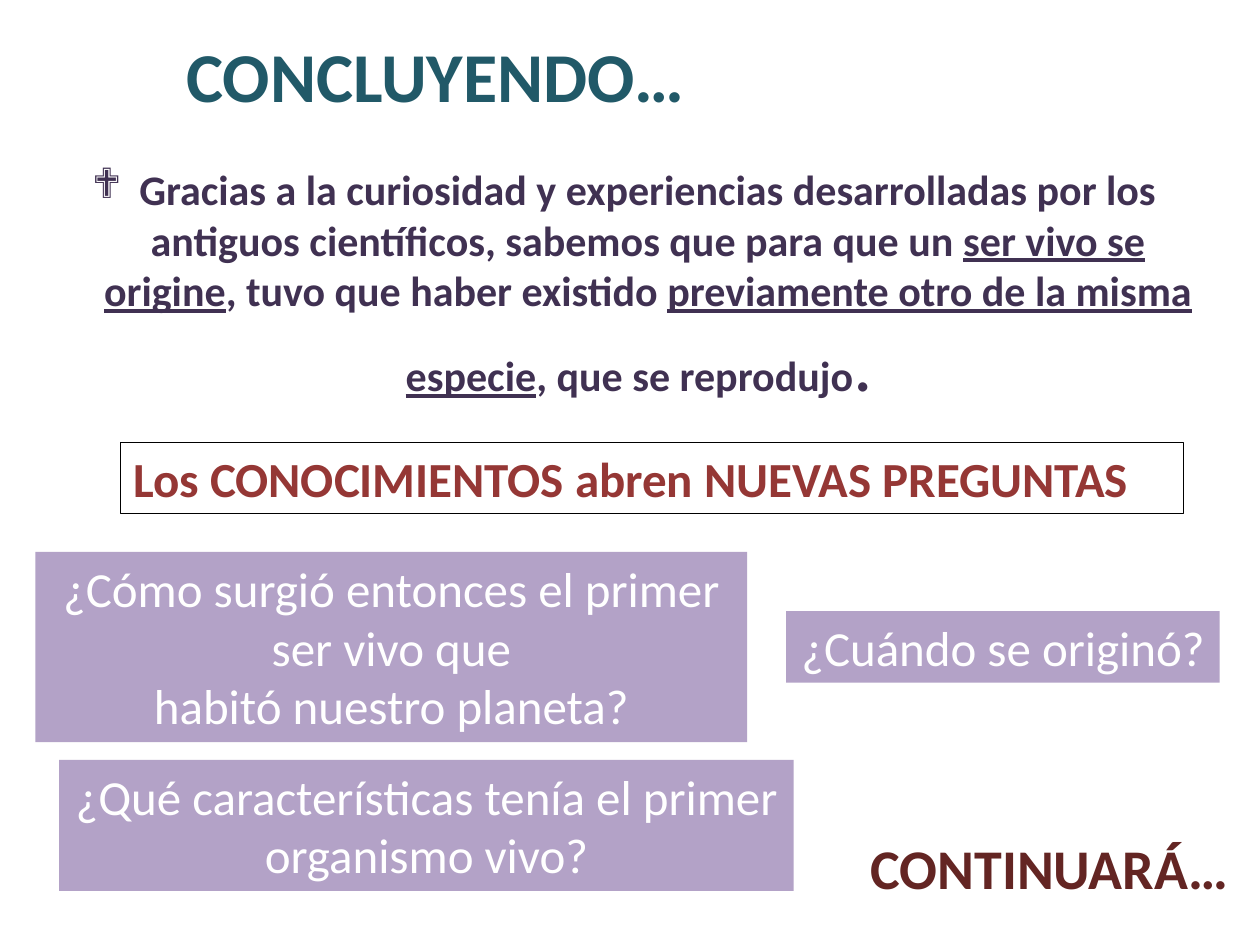
from lxml.etree import SubElement
from pptx import Presentation
from pptx.dml.color import RGBColor
from pptx.enum.shapes import MSO_SHAPE
from pptx.enum.text import MSO_ANCHOR, MSO_AUTO_SIZE, PP_ALIGN
from pptx.oxml.ns import qn
from pptx.util import Pt

COLORS = {
    "heading": "215968",
    "conclusion": "403152",
    "statement": "953735",
    "closing": "632523",
    "question_fill": "B3A2C7",
    "question_text": "FFFFFF",
    "border": "000000",
}


def color(name):
    return RGBColor.from_string(COLORS[name])


def style(paragraph, size, color_name, bold):
    paragraph.font.name = "Calibri"
    paragraph.font.size = Pt(size)
    paragraph.font.bold = bold
    paragraph.font.color.rgb = color(color_name)


presentation = Presentation()
presentation.slide_width = Pt(720)
presentation.slide_height = Pt(540)
slide = presentation.slides.add_slide(presentation.slide_layouts[5])

conclusion = slide.shapes.title
conclusion.left, conclusion.top = Pt(25.2), Pt(72)
conclusion.width, conclusion.height = Pt(663.1), Pt(182.2)
frame = conclusion.text_frame
frame.word_wrap = True
frame.auto_size = MSO_AUTO_SIZE.NONE
frame.vertical_anchor = MSO_ANCHOR.MIDDLE
paragraph = frame.paragraphs[0]
paragraph.alignment = PP_ALIGN.CENTER
properties = paragraph._p.get_or_add_pPr()
properties.set("marL", str(Pt(27)))
properties.set("indent", str(Pt(-27)))
SubElement(properties, qn("a:buFont"), typeface="Wingdings")
SubElement(properties, qn("a:buChar"), char="❖")
style(paragraph, 24, "conclusion", True)

conclusion_parts = [
    ("Gracias a la curiosidad y experiencias desarrolladas por los antiguos "
     "científicos, sabemos que para que un ", False),
    ("ser vivo se", True),
    ("\v", False),
    ("origine", True),
    (", tuvo que haber existido ", False),
    ("previamente otro de la misma especie", True),
    (", que se reprodujo", False),
    (". ", False),
]
for text, underlined in conclusion_parts:
    if text == "\v":
        paragraph.add_line_break()
        continue
    run = paragraph.add_run()
    run.text = text
    run.font.underline = underlined
run.font.size = Pt(44)
run.font.bold = False

labels = [
    ("CONCLUYENDO…", 99.4, 15.1, 465.1, 55.4, 40, "heading"),
    ("Los CONOCIMIENTOS abren NUEVAS PREGUNTAS", 69.1, 252.7, 607, 41, 28, "statement"),
    ("CONTINUARÁ…", 490.3, 473, 223.2, 46.1, 32, "closing"),
]
for text, left, top, width, height, size, name in labels:
    label = slide.shapes.add_textbox(Pt(left), Pt(top), Pt(width), Pt(height))
    label.text_frame.word_wrap = True
    label.text_frame.text = text
    style(label.text_frame.paragraphs[0], size, name, True)
    if name == "statement":
        label.line.color.rgb = color("border")
        label.line.width = Pt(0.5)

questions = [
    (["¿Cómo surgió entonces el primer", "ser vivo que", "habitó nuestro planeta?"],
     20.2, 315.4, 406.8, 108.7),
    (["¿Qué características tenía el primer", "organismo vivo?"],
     33.8, 434.2, 419.8, 74.9),
    (["¿Cuándo se originó?"], 449.3, 349.2, 247.7, 41),
]
for lines, left, top, width, height in questions:
    question = slide.shapes.add_shape(
        MSO_SHAPE.RECTANGLE, Pt(left), Pt(top), Pt(width), Pt(height))
    question.shadow.inherit = False
    question.fill.solid()
    question.fill.fore_color.rgb = color("question_fill")
    question.line.fill.background()
    frame = question.text_frame
    frame.word_wrap = False
    frame.vertical_anchor = MSO_ANCHOR.TOP
    frame.text = "\n".join(lines)
    for paragraph in frame.paragraphs:
        paragraph.alignment = PP_ALIGN.CENTER
        style(paragraph, 28, "question_text", False)

presentation.save("out.pptx")
